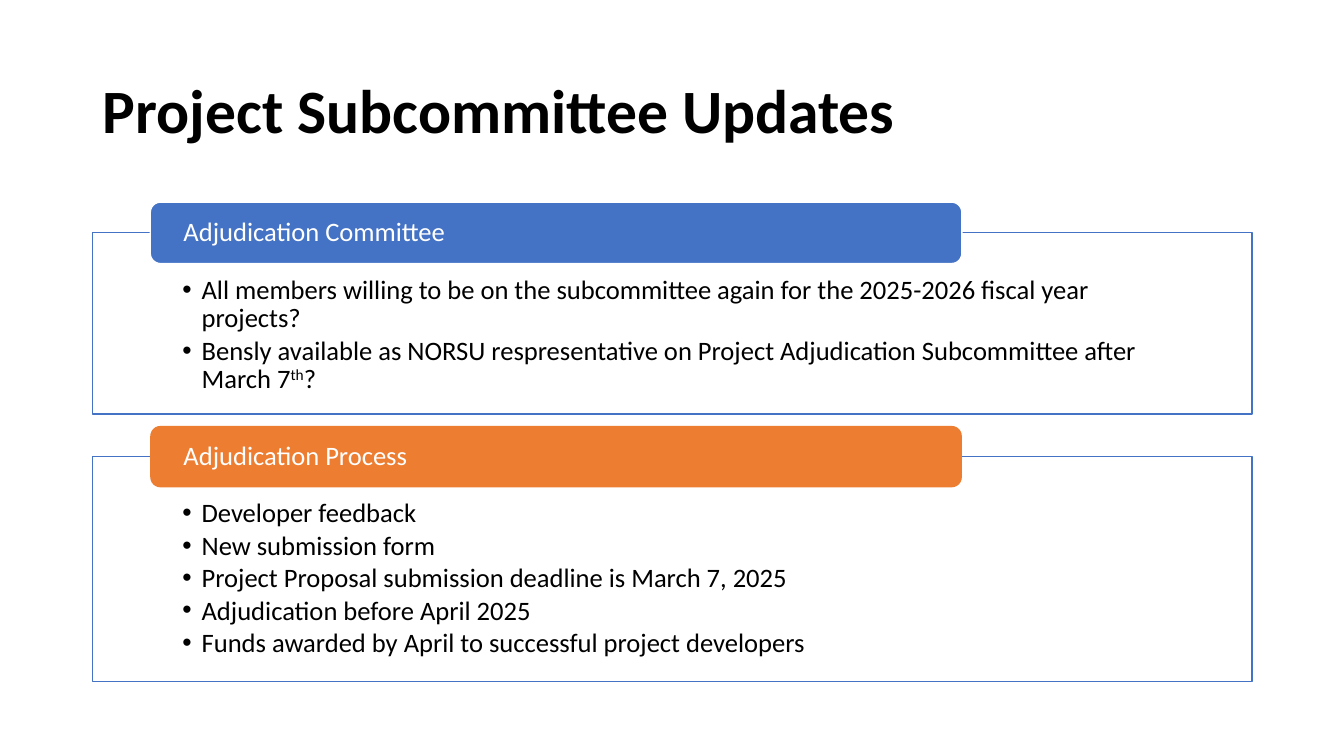
from dataclasses import dataclass

from lxml import etree
from pptx import Presentation
from pptx.dml.color import RGBColor
from pptx.enum import shapes, text
from pptx.oxml import ns
from pptx.util import Inches, Pt

TITLE = "Project Subcommittee Updates"
# Each bullet is a list of (text, raised) runs.
PANELS = [
    {
        "head": "Adjudication Committee", "color": "4472C4", "edge": "FFFFFF",
        "top": 2.31, "height": 1.8,
        "points": [
            [("All members willing to be on the subcommittee again for the "
              "2025-2026 fiscal year projects?", False)],
            [("Bensly available as NORSU respresentative on Project "
              "Adjudication Subcommittee after March 7", False),
             ("th", True), ("?", False)],
        ],
    },
    {
        "head": "Adjudication Process", "color": "ED7D31", "edge": None,
        "top": 4.53, "height": 2.23,
        "points": [
            [("Developer feedback", False)],
            [("New submission form", False)],
            [("Project Proposal submission deadline is March 7, 2025", False)],
            [("Adjudication before April 2025", False)],
            [("Funds awarded by April to successful project developers", False)],
        ],
    },
]


@dataclass
class Theme:
    font: str = "Calibri"
    ink: str = "000000"
    paper: str = "FFFFFF"
    line: str = "4472C4"
    title: float = 44
    body: float = 19


THEME = Theme()
LEFT, WIDTH = 0.92, 11.5
TAB_LEFT, TAB_WIDTH, TAB_HEIGHT = 1.49, 8.05, 0.61
INDENT = Inches(0.19)


def style(run, size, color, bold=False):
    run.font.name = THEME.font
    run.font.size = Pt(size)
    run.font.bold = bold
    run.font.color.rgb = RGBColor.from_string(color)


def add_box(slide, kind, place, fill, edge, pads, anchor):
    box = slide.shapes.add_shape(kind, *map(Inches, place))
    box.shadow.inherit = False
    box.fill.solid()
    box.fill.fore_color.rgb = RGBColor.from_string(fill)
    if edge:
        box.line.color.rgb = RGBColor.from_string(edge)
        box.line.width = Pt(1)
    else:
        box.line.fill.background()
    frame = box.text_frame
    frame.word_wrap = True
    frame.vertical_anchor = anchor
    (frame.margin_left, frame.margin_top,
     frame.margin_right, frame.margin_bottom) = map(Inches, pads)
    return box


def set_bullet(para):
    props = para._p.get_or_add_pPr()
    props.set("marL", str(INDENT))
    props.set("indent", str(-INDENT))
    etree.SubElement(props, ns.qn("a:buFont"), typeface="Arial")
    etree.SubElement(props, ns.qn("a:buChar"), char="•")


def add_points(frame, points):
    for i, parts in enumerate(points):
        para = frame.add_paragraph() if i else frame.paragraphs[0]
        para.alignment = text.PP_ALIGN.LEFT
        para.level = 1
        para.line_spacing = 0.9
        para.space_after = Pt(2.6)
        set_bullet(para)
        for words, raised in parts:
            run = para.add_run()
            run.text = words
            style(run, THEME.body, THEME.ink)
            if raised:
                run.font._element.set("baseline", "30000")


def add_panel(slide, panel):
    top = panel["top"]
    body = add_box(slide, shapes.MSO_SHAPE.RECTANGLE,
                   (LEFT, top, WIDTH, panel["height"]),
                   THEME.paper, THEME.line, (0.89, 0.43, 0.89, 0.15),
                   text.MSO_ANCHOR.TOP)
    color = body.fill._xPr.find(".//" + ns.qn("a:srgbClr"))
    etree.SubElement(color, ns.qn("a:alpha"), val="90000")
    add_points(body.text_frame, panel["points"])

    tab = add_box(slide, shapes.MSO_SHAPE.ROUNDED_RECTANGLE,
                  (TAB_LEFT, top - TAB_HEIGHT / 2, TAB_WIDTH, TAB_HEIGHT),
                  panel["color"], panel["edge"], (0.3, 0, 0.3, 0),
                  text.MSO_ANCHOR.MIDDLE)
    tab.text_frame.text = panel["head"]
    para = tab.text_frame.paragraphs[0]
    para.alignment = text.PP_ALIGN.LEFT
    para.line_spacing = 0.9
    style(para.runs[0], THEME.body, THEME.paper)


def add_title(slide):
    title = slide.shapes.title
    title.left, title.top, title.width, title.height = map(
        Inches, (LEFT, 0.4, WIDTH, 1.45))
    title.text_frame.text = TITLE
    title.text_frame.vertical_anchor = text.MSO_ANCHOR.MIDDLE
    para = title.text_frame.paragraphs[0]
    para.alignment = text.PP_ALIGN.LEFT
    para.line_spacing = 0.9
    style(para.runs[0], THEME.title, THEME.ink, bold=True)


def main():
    deck = Presentation()
    deck.slide_width, deck.slide_height = Inches(13.33), Inches(7.5)
    slide = deck.slides.add_slide(deck.slide_layouts[5])
    add_title(slide)
    for panel in PANELS:
        add_panel(slide, panel)
    deck.save("out.pptx")


if __name__ == "__main__":
    main()
